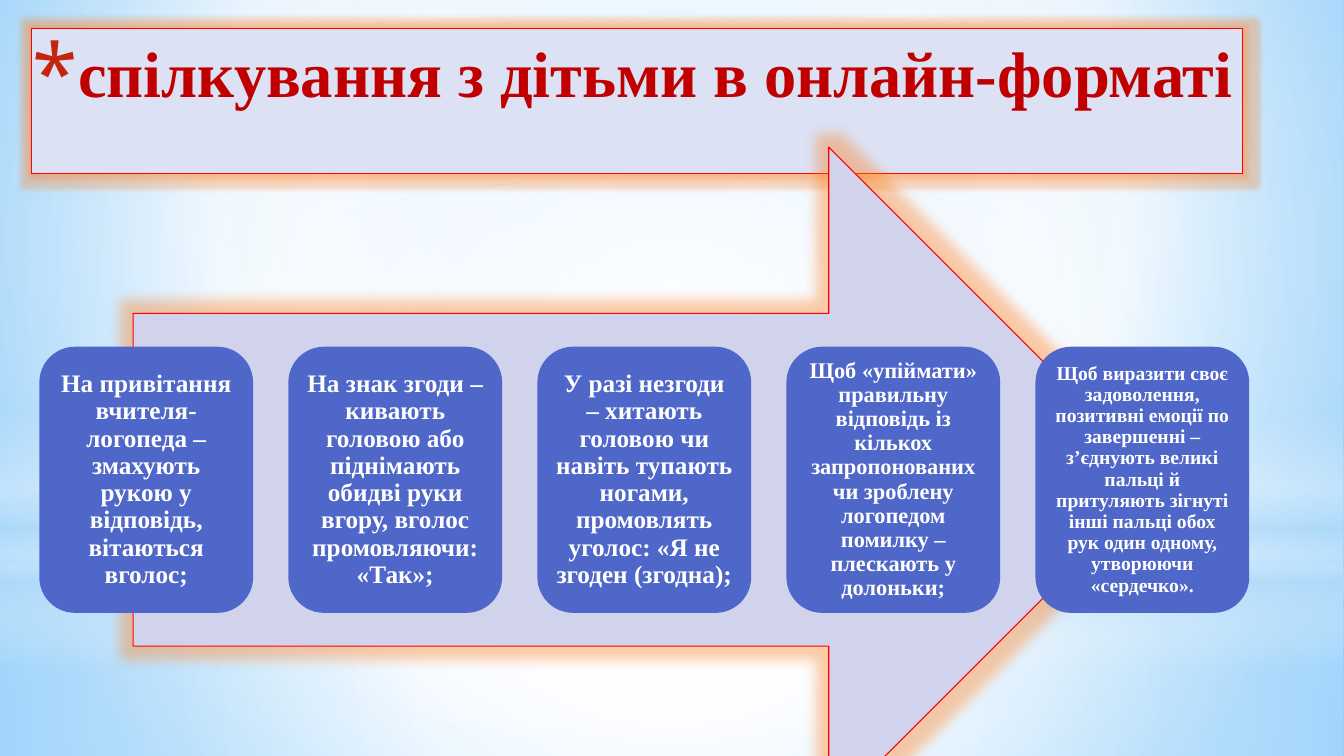
from lxml.etree import SubElement
from pptx import Presentation
from pptx.dml.color import RGBColor
from pptx.enum.shapes import MSO_SHAPE
from pptx.enum.text import MSO_ANCHOR, PP_ALIGN
from pptx.oxml.ns import qn
from pptx.util import Inches, Pt

FONT = "Times New Roman"
TITLE = "спілкування з дітьми в онлайн-форматі"
CARDS = [
    ("На привітання вчителя-логопеда – змахують рукою у відповідь, вітаються вголос;", 18),
    ("На знак згоди – кивають головою або піднімають обидві руки вгору, вголос "
     "промовляючи: «Так»;", 18),
    ("У разі незгоди – хитають головою чи навіть тупають ногами, промовлять уголос: "
     "«Я не згоден (згодна);", 18),
    ("Щоб «упіймати» правильну відповідь із кількох запропонованих чи зроблену "
     "логопедом помилку – плескають у долоньки;", 16),
    ("Щоб виразити своє задоволення, позитивні емоції по завершенні – з’єднують великі "
     "пальці й притуляють зігнуті інші пальці обох рук один одному, утворюючи "
     "«сердечко».", 14),
]
CARD_LEFT, CARD_TOP, CARD_W, CARD_H, CARD_STEP = 0.39, 3.44, 2.12, 2.64, 2.47
CENTRE = (50, 50, 50, 50)
BACKGROUND = [(0, "9ED5FF", 100), (60, "FFFFFF", 100), (100, "5BB9FF", 100)]
LAYERS = [
    (MSO_SHAPE.RECTANGLE, (0, 5.58, 13.33, 1.92), CENTRE,
     [(0, "FFFFFF", 91), (37, "FFFFFF", 76), (100, "B4DCFA", 79)]),
    (MSO_SHAPE.RECTANGLE, (0, 0, 13.33, 5.58), CENTRE,
     [(0, "FFFFFF", 89), (48, "FFFFFF", 62), (100, "B4DCFA", 79)]),
    (MSO_SHAPE.RECTANGLE, (0, 4.12, 13.33, 2.5), None,
     [(0, "FFFFFF", 0), (29, "FFFFFF", 30), (45, "B4DCFA", 40),
      (55, "FFFFFF", 26), (65, "B4DCFA", 60), (100, "FFFFFF", 0)]),
    (MSO_SHAPE.OVAL, (0, 1.75, 13.33, 5.58), CENTRE,
     [(0, "FFFFFF", 100), (56, "FFFFFF", 0)]),
]


def rgb(value):
    return RGBColor.from_string(value)


def add(parent, tag, **attrs):
    return SubElement(parent, qn(tag), {k: str(v) for k, v in attrs.items()})


def add_colour(parent, colour, alpha):
    add(add(parent, "a:srgbClr", val=colour), "a:alpha", val=alpha * 1000)


def set_gradient(props, stops, focus):
    solid = props.find(qn("a:solidFill"))
    grad = add(props, "a:gradFill", rotWithShape=1)
    props.replace(solid, grad)
    stop_list = add(grad, "a:gsLst")
    for pos, colour, alpha in stops:
        add_colour(add(stop_list, "a:gs", pos=pos * 1000), colour, alpha)
    if focus:
        circle = add(grad, "a:path", path="circle")
        add(circle, "a:fillToRect", **{k: v * 1000 for k, v in zip("ltrb", focus)})
    else:
        add(grad, "a:lin", ang=90 * 60000, scaled=0)


def add_box(s, kind, box, fill):
    sp = s.shapes.add_shape(kind, *[Inches(v) for v in box])
    sp.shadow.inherit = False
    sp.fill.solid()
    sp.fill.fore_color.rgb = rgb(fill)
    sp.line.fill.background()
    return sp


def add_glowing(s, kind, box, fill, radius, alpha):
    sp = add_box(s, kind, box, fill)
    sp.line.color.rgb = rgb("FF0000")
    sp.line.width = Pt(0.75)
    effects = sp._element.spPr.find(qn("a:effectLst"))
    add_colour(add(effects, "a:glow", rad=Pt(radius)), "FF8021", alpha)
    return sp


def write(sp, text, size, colour, align, anchor):
    tf = sp.text_frame
    tf.word_wrap = True
    tf.vertical_anchor = anchor
    p = tf.paragraphs[0]
    p.text = text
    p.alignment = align
    p.font.name = FONT
    p.font.size = Pt(size)
    p.font.bold = True
    p.font.color.rgb = rgb(colour)
    return p


def add_title(s):
    box = (0.31, 0.28, 12.01, 1.44)
    sp = add_glowing(s, MSO_SHAPE.RECTANGLE, box, "DCE1F4", 7, 30)
    p = write(sp, TITLE, 46, "C00000", PP_ALIGN.RIGHT, MSO_ANCHOR.TOP)
    sp.text_frame.margin_left = 0
    props = p._p.get_or_add_pPr()
    props.set("marL", str(Inches(0.35)))
    props.set("indent", str(Inches(-0.35)))
    bullet = [add(props, "a:buClr"), add(props, "a:buSzPct", val=128000),
              add(props, "a:buFont", typeface="Trebuchet MS"),
              add(props, "a:buChar", char="*")]
    add(bullet[0], "a:srgbClr", val="C3260C")
    for i, part in enumerate(bullet):
        props.insert(i, part)


def add_card(s, i, text, size):
    box = (CARD_LEFT + i * CARD_STEP, CARD_TOP, CARD_W, CARD_H)
    sp = add_box(s, MSO_SHAPE.ROUNDED_RECTANGLE, box, "4E67C8")
    p = write(sp, text, size, "FFFFFF", PP_ALIGN.CENTER, MSO_ANCHOR.MIDDLE)
    p.line_spacing = 0.9
    tf = sp.text_frame
    inset = Inches(size / 250)
    tf.margin_left = tf.margin_right = tf.margin_top = tf.margin_bottom = inset


def main():
    """Build the slide about talking with children online."""
    prs = Presentation()
    prs.slide_width, prs.slide_height = Inches(13.33), Inches(7.5)
    s = prs.slides.add_slide(prs.slide_layouts[6])
    s.background.fill.solid()
    set_gradient(s._element.xpath(".//p:bgPr")[0], BACKGROUND, (20, 10, 20, 60))
    for kind, box, focus, stops in LAYERS:
        set_gradient(add_box(s, kind, box, "FFFFFF")._element.spPr, stops, focus)
    add_title(s)
    add_glowing(s, MSO_SHAPE.RIGHT_ARROW, (1.32, 1.46, 10.2, 6.6), "D0D3EB", 18, 40)
    for i, (text, size) in enumerate(CARDS):
        add_card(s, i, text, size)
    prs.save("out.pptx")


if __name__ == "__main__":
    main()
